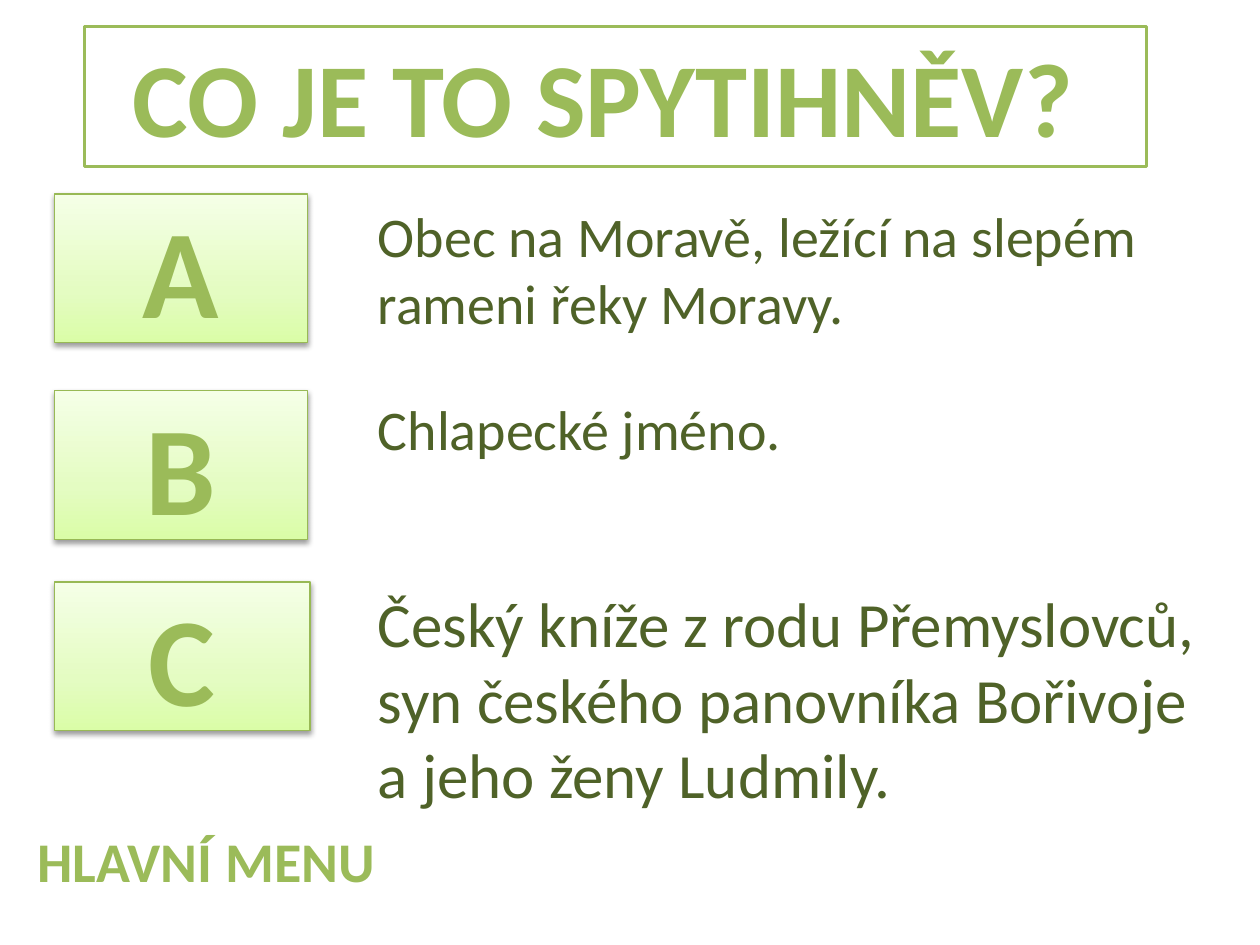
from copy import deepcopy

from pptx import Presentation
from pptx.dml.color import RGBColor
from pptx.enum.shapes import MSO_SHAPE as Shape
from pptx.enum.text import MSO_ANCHOR as Anchor, PP_ALIGN as Align
from pptx.oxml import parse_xml
from pptx.oxml.ns import nsdecls, qn
from pptx.util import Pt


def rgb(value):
    return RGBColor.from_string(value)


def write(holder, text, size, color, bold=False, align=Align.LEFT, anchor=Anchor.TOP):
    frame = holder.text_frame
    frame.word_wrap = True
    frame.vertical_anchor = anchor
    frame.text = text
    paragraph = frame.paragraphs[0]
    paragraph.alignment = align
    run = paragraph.runs[0]
    run.font.name = "Calibri"
    run.font.size = Pt(size)
    run.font.bold = bold
    run.font.color.rgb = rgb(color)
    return run


GREEN, DARK_GREEN = "9BBB59", "4F6228"
GRADIENT = [(0, "DAFDA7"), (0.35, "E4FCC2"), (1, "F5FFE7")]
SHADOW = (
    f'<a:outerShdw {nsdecls("a")} blurRad="{Pt(3.1)}" dist="{Pt(1.6)}" dir="5400000" rotWithShape="0">'
    '<a:srgbClr val="000000"><a:alpha val="38000"/></a:srgbClr></a:outerShdw>'
)
OUTLINE = (
    f'<a:ln {nsdecls("a")} w="{Pt(1.5)}"><a:solidFill><a:srgbClr val="FEFEFE"/></a:solidFill></a:ln>'
)

prs = Presentation()
prs.slide_width, prs.slide_height = Pt(720), Pt(540)
shapes = prs.slides.add_slide(prs.slide_layouts[6]).shapes

question = shapes.add_shape(Shape.RECTANGLE, Pt(48.2), Pt(15.1), Pt(607), Pt(80))
question.shadow.inherit = False
question.fill.solid()
question.fill.fore_color.rgb = rgb("FFFFFF")
question.line.color.rgb = rgb(GREEN)
question.line.width = Pt(2)
write(question, "CO JE TO SPYTIHNĚV? ", 60, GREEN, True, Align.CENTER)

menu = shapes.add_textbox(Pt(14.4), Pt(468.7), Pt(272), Pt(46))
menu_run = write(menu, "HLAVNÍ MENU", 32, GREEN, True)
menu_run.font._element.insert(0, parse_xml(OUTLINE))

answers = [
    ("A", 110.9, 144.8, "Obec na Moravě, ležící na slepém rameni řeky Moravy.", 111.6, 499, 85, 32),
    ("B", 223.2, 144.8, "Chlapecké jméno.", 221.8, 516, 46, 32),
    ("C", 332.6, 146.2, "Český kníže z rodu Přemyslovců, syn českého panovníka Bořivoje a jeho ženy Ludmily.",
     330.5, 492, 138, 36),
]
for letter, button_top, button_width, answer, top, width, height, size in answers:
    button = shapes.add_shape(Shape.RECTANGLE, Pt(31), Pt(button_top), Pt(button_width), Pt(85))
    button.fill.gradient()
    button.fill.gradient_angle = 90
    stops = button._element.spPr.find(qn("a:gradFill")).find(qn("a:gsLst"))
    stops.append(deepcopy(stops[-1]))
    for stop, (position, color) in zip(button.fill.gradient_stops, GRADIENT):
        stop.position = position
        stop.color.rgb = rgb(color)
    button.line.color.rgb = rgb("98B955")
    button.line.width = Pt(0.75)
    button.shadow.inherit = False
    button._element.spPr.find(qn("a:effectLst")).append(parse_xml(SHADOW))
    write(button, letter, 72, GREEN, True, Align.CENTER, Anchor.MIDDLE)

    label = shapes.add_textbox(Pt(208.8), Pt(top), Pt(width), Pt(height))
    write(label, answer, size, DARK_GREEN)

prs.save("out.pptx")
